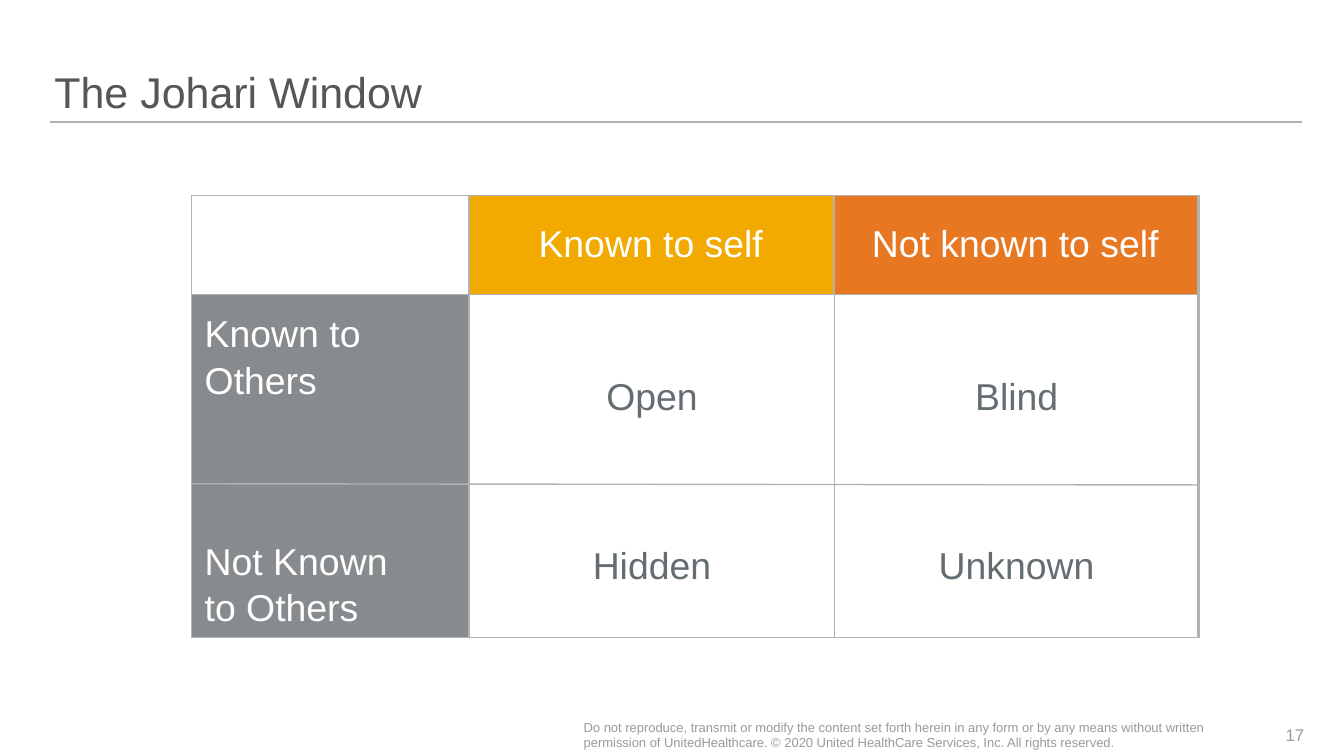
from dataclasses import dataclass

from lxml.etree import SubElement
from pptx import Presentation
from pptx.dml.color import RGBColor
from pptx.enum.shapes import MSO_CONNECTOR, MSO_SHAPE
from pptx.enum.text import MSO_ANCHOR, MSO_AUTO_SIZE, PP_ALIGN
from pptx.oxml.ns import qn
from pptx.util import Cm, Pt


@dataclass(frozen=True)
class Theme:
    font: str = "Arial"
    title: str = "55565A"
    rule: str = "B1B3B3"
    known: str = "F2AA00"
    unknown: str = "E87722"
    label: str = "888B8D"
    body: str = "646D72"
    white: str = "FFFFFF"
    footer: str = "999A9B"
    title_size: float = 30.7
    body_size: float = 26.7
    number_size: float = 12
    footer_size: float = 9.3


class SlideBuilder:
    """Draw styled elements on one slide, with lengths in centimetres."""

    def __init__(self, slide, theme):
        self.slide = slide
        self.theme = theme

    def set_text(self, shape, lines, size, color, align=PP_ALIGN.LEFT,
                 anchor=MSO_ANCHOR.MIDDLE, insets=(0, 0, 0, 0), gaps=()):
        frame = shape.text_frame
        frame.word_wrap = True
        frame.auto_size = MSO_AUTO_SIZE.NONE
        frame.vertical_anchor = anchor
        frame.margin_left, frame.margin_top, frame.margin_right, frame.margin_bottom = map(Cm, insets)
        frame.text = "\n".join(lines)
        for paragraph in frame.paragraphs:
            paragraph.alignment = align
            paragraph.font.name = self.theme.font
            paragraph.font.size = Pt(size)
            paragraph.font.bold = False
            paragraph.font.color.rgb = RGBColor.from_string(color)
        for paragraph, gap in zip(frame.paragraphs[1:], gaps):
            paragraph.space_before = Pt(gap)

    def title(self, text, left, top, width, height):
        shape = self.slide.shapes.title
        shape.left, shape.top, shape.width, shape.height = map(Cm, (left, top, width, height))
        self.set_text(shape, [text], self.theme.title_size, self.theme.title, anchor=MSO_ANCHOR.BOTTOM)
        shape.text_frame.paragraphs[0].line_spacing = 0.9

    def rectangle(self, left, top, width, height, fill=None, line_width=1):
        shape = self.slide.shapes.add_shape(MSO_SHAPE.RECTANGLE, *map(Cm, (left, top, width, height)))
        shape.shadow.inherit = False
        if fill:
            shape.fill.solid()
            shape.fill.fore_color.rgb = RGBColor.from_string(fill)
        else:
            shape.fill.background()
        shape.line.color.rgb = RGBColor.from_string(self.theme.rule)
        shape.line.width = Pt(line_width)
        return shape

    def rule(self, left, top, right, bottom):
        line = self.slide.shapes.add_connector(MSO_CONNECTOR.STRAIGHT, *map(Cm, (left, top, right, bottom)))
        line.line.color.rgb = RGBColor.from_string(self.theme.rule)
        line.line.width = Pt(1)
        SubElement(line._element.spPr, qn("a:effectLst"))

    def text(self, text, left, top, width, height, size, align=PP_ALIGN.LEFT):
        box = self.slide.shapes.add_textbox(*map(Cm, (left, top, width, height)))
        self.set_text(box, [text], size, self.theme.footer, align)


def draw_window(builder):
    theme = builder.theme
    left, top, height = 4.83, 4.93, 11.13
    label_width, column_width, header_height = 6.98, 9.19, 2.49
    right = left + label_width + 2 * column_width
    builder.rectangle(left, top, right - left, height)

    label = builder.rectangle(left, top + header_height, label_width,
                              height - header_height, theme.label, 0.75)
    builder.set_text(label, ["Known to", "Others", "Not Known", "to Others"],
                     theme.body_size, theme.white, anchor=MSO_ANCHOR.TOP,
                     insets=(0.33, 0.4, 0, 0), gaps=(1.3, 97.2, 1.3))

    columns = [
        ("Known to self", theme.known, ["Open", "Hidden"]),
        ("Not known to self", theme.unknown, ["Blind", "Unknown"]),
    ]
    for index, (heading, color, areas) in enumerate(columns):
        column_left = left + label_width + index * column_width
        header = builder.rectangle(column_left, top, column_width, header_height, color, 0.75)
        builder.set_text(header, [heading], theme.body_size, theme.white,
                         PP_ALIGN.CENTER, insets=(0, 0, 0, 0.1))
        column = builder.rectangle(column_left + 0.03, top, column_width, height)
        builder.set_text(column, areas, theme.body_size, theme.body, PP_ALIGN.CENTER,
                         MSO_ANCHOR.TOP, insets=(0.25, 4.47, 0.25, 0), gaps=(89,))
    builder.rule(left, 12.19, right, 12.22)


def main():
    presentation = Presentation()
    presentation.slide_width, presentation.slide_height = Cm(33.87), Cm(19.05)
    slide = presentation.slides.add_slide(presentation.slide_layouts[5])
    theme = Theme()
    builder = SlideBuilder(slide, theme)
    builder.rule(1.27, 3.07, 32.82, 3.07)
    builder.title("The Johari Window", 1.37, 0, 31.45, 2.97)
    draw_window(builder)
    builder.text(
        "Do not reproduce, transmit or modify the content set forth herein in any form or by any means "
        "without written permission of UnitedHealthcare. © 2020 United HealthCare Services, Inc. "
        "All rights reserved.", 14.71, 18.01, 16.46, 1.02, theme.footer_size)
    builder.text("17", 31.17, 18.01, 1.7, 1.02, theme.number_size, PP_ALIGN.RIGHT)
    presentation.save("out.pptx")


if __name__ == "__main__":
    main()
